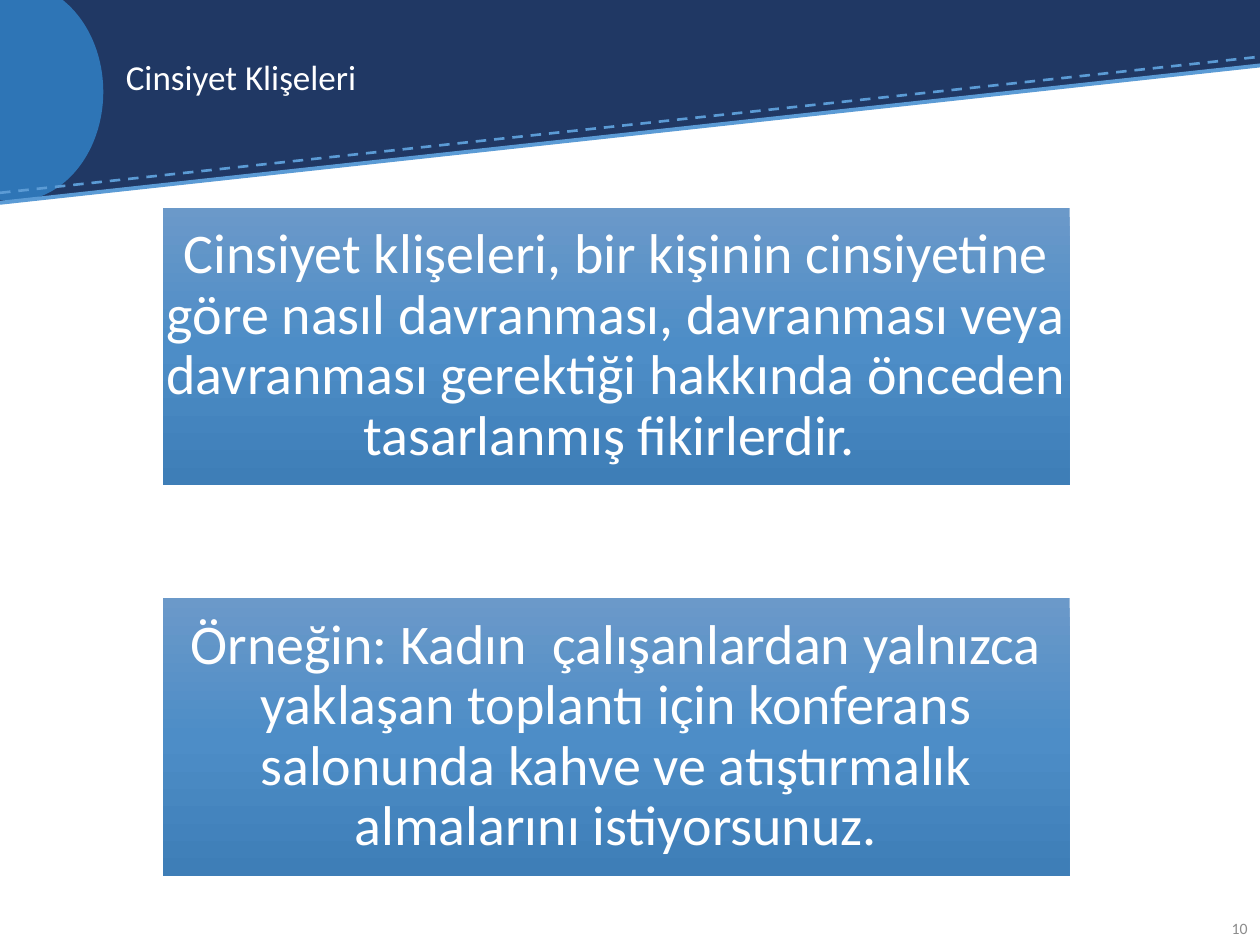
"""Build the slide on gender stereotypes with a slanted header and two panels."""
from copy import deepcopy
from dataclasses import dataclass
from typing import Optional

from pptx import Presentation
from pptx.dml.color import RGBColor
from pptx.enum import dml, shapes, text
from pptx.oxml.ns import qn
from pptx.util import Pt

NAVY = RGBColor(0x20, 0x38, 0x64)
BLUE = RGBColor(0x2E, 0x75, 0xB6)
SKY = RGBColor(0x5B, 0x9B, 0xD5)
WHITE = RGBColor(0xFF, 0xFF, 0xFF)
GRAY = RGBColor(0x8C, 0x8C, 0x8C)
PANEL_STOPS = (
    (0, RGBColor(0x6B, 0x99, 0xC9)),
    (0.5, RGBColor(0x4D, 0x8D, 0xC7)),
    (1, RGBColor(0x3E, 0x7E, 0xB7)),
)
WIDTH, HEIGHT = 720, 540


@dataclass
class Box:
    left: float
    top: float
    width: float
    height: float

    def lengths(self) -> tuple:
        return tuple(Pt(v) for v in (self.left, self.top, self.width, self.height))


@dataclass
class HeaderShape:
    kind: shapes.MSO_SHAPE
    box: Box
    color: RGBColor
    flipped: bool = False


@dataclass
class HeaderLine:
    start_y: float
    end_y: float
    weight: float
    dash: Optional[dml.MSO_LINE] = None


@dataclass
class Label:
    words: str
    box: Box
    paragraph_format: dict
    font_format: dict


HEADER_SHAPES = (
    HeaderShape(shapes.MSO_SHAPE.RECTANGLE, Box(0, 0, WIDTH, 37.5), NAVY),
    HeaderShape(shapes.MSO_SHAPE.RIGHT_TRIANGLE, Box(0, 37, WIDTH, 78.5), NAVY, True),
    HeaderShape(shapes.MSO_SHAPE.OVAL, Box(-42.5, -10, 101.5, 125), BLUE),
)
HEADER_LINES = (
    HeaderLine(110.2, 32.4, 1.5, dml.MSO_LINE.DASH),
    HeaderLine(115.9, 37.4, 2.25),
)
LABELS = (
    Label("Cinsiyet Klişeleri", Box(64.8, 14.4, 579.6, 62),
          {"line_spacing": 0.9}, {"size": Pt(20), "color": WHITE}),
    Label("10", Box(682, 516, 38, 29),
          {"alignment": text.PP_ALIGN.RIGHT, "space_after": Pt(6)},
          {"size": Pt(9), "color": GRAY}),
)
PANEL_TEXTS = (
    "Cinsiyet klişeleri, bir kişinin cinsiyetine göre nasıl davranması, davranması veya "
    "davranması gerektiği hakkında önceden tasarlanmış fikirlerdir. ",
    "Örneğin: Kadın  çalışanlardan yalnızca yaklaşan toplantı için konferans salonunda "
    "kahve ve atıştırmalık almalarını istiyorsunuz.",
)
PANEL_TOP, PANEL_PITCH = 118.8, 223.2


def set_attributes(target, values: dict) -> None:
    for name, value in values.items():
        setattr(target, name, value)


def write_text(shape, words: str, paragraph_format: dict, font_format: dict) -> None:
    frame = shape.text_frame
    set_attributes(frame, {"word_wrap": True, "vertical_anchor": text.MSO_ANCHOR.MIDDLE})
    paragraph = frame.paragraphs[0]
    set_attributes(paragraph, paragraph_format)
    run = paragraph.add_run()
    run.text = words
    set_attributes(run.font, {"name": "Calibri", "size": font_format["size"]})
    run.font.color.rgb = font_format["color"]


def add_plain_shape(slide, kind: shapes.MSO_SHAPE, box: Box):
    shape = slide.shapes.add_shape(kind, *box.lengths())
    shape.shadow.inherit = False
    shape.line.fill.background()
    return shape


def draw_header_shape(slide, item: HeaderShape) -> None:
    shape = add_plain_shape(slide, item.kind, item.box)
    shape.fill.solid()
    shape.fill.fore_color.rgb = item.color
    if item.flipped:
        shape._element.spPr.find(qn("a:xfrm")).set("flipV", "1")


def draw_header_line(slide, item: HeaderLine) -> None:
    connector = slide.shapes.add_connector(
        shapes.MSO_CONNECTOR.STRAIGHT, 0, Pt(item.start_y), Pt(WIDTH), Pt(item.end_y))
    connector.line.color.rgb = SKY
    set_attributes(connector.line, {"width": Pt(item.weight), "dash_style": item.dash})
    properties = connector._element.spPr
    properties.append(properties.makeelement(qn("a:effectLst"), {}))


def draw_label(slide, label: Label) -> None:
    shape = slide.shapes.add_textbox(*label.box.lengths())
    write_text(shape, label.words, label.paragraph_format, label.font_format)


def draw_panel(slide, top: float, words: str) -> None:
    shape = add_plain_shape(slide, shapes.MSO_SHAPE.RECTANGLE, Box(92.9, top, 518.4, 158.4))
    shape.fill.gradient()
    shape.fill.gradient_angle = 270
    stop_list = shape._element.spPr.find(".//" + qn("a:gsLst"))
    stop_list.append(deepcopy(stop_list[0]))
    for stop, (position, color) in zip(shape.fill.gradient_stops, PANEL_STOPS):
        stop.position = position
        stop.color.rgb = color
    margins = ("margin_left", "margin_top", "margin_right", "margin_bottom")
    set_attributes(shape.text_frame, dict.fromkeys(margins, Pt(1.6)))
    write_text(shape, words,
               {"alignment": text.PP_ALIGN.CENTER, "line_spacing": 0.9},
               {"size": Pt(32), "color": WHITE})


def main() -> None:
    presentation = Presentation()
    set_attributes(presentation, {"slide_width": Pt(WIDTH), "slide_height": Pt(HEIGHT)})
    slide = presentation.slides.add_slide(presentation.slide_layouts[6])
    for item in HEADER_SHAPES:
        draw_header_shape(slide, item)
    for line in HEADER_LINES:
        draw_header_line(slide, line)
    for label in LABELS:
        draw_label(slide, label)
    for index, words in enumerate(PANEL_TEXTS):
        draw_panel(slide, PANEL_TOP + index * PANEL_PITCH, words)
    presentation.save("out.pptx")


if __name__ == "__main__":
    main()
